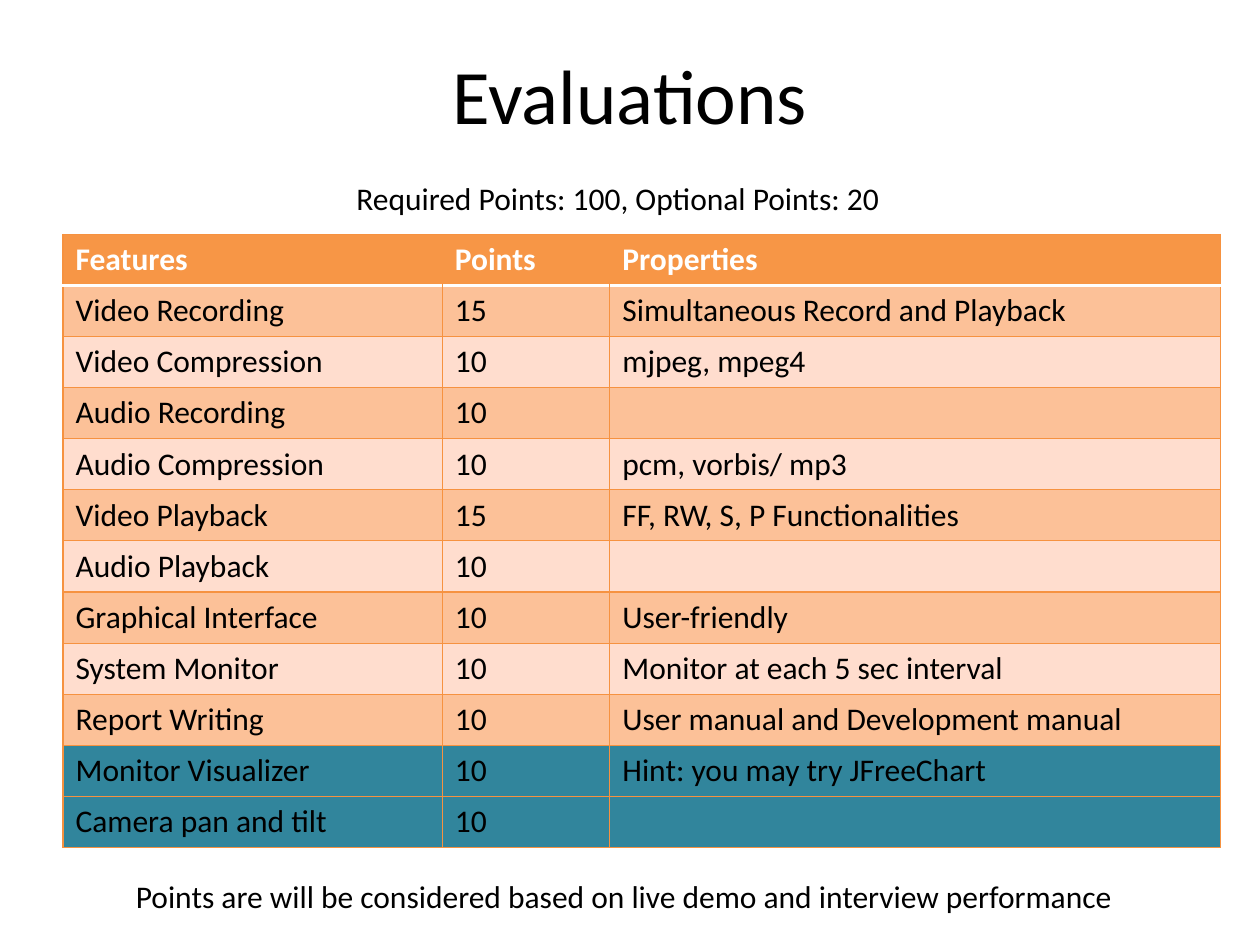
from lxml import etree
from pptx import Presentation
from pptx.dml.color import RGBColor
from pptx.enum.text import MSO_ANCHOR, MSO_AUTO_SIZE, PP_ALIGN
from pptx.oxml.ns import qn
from pptx.util import Inches, Pt

MIDDLE = MSO_ANCHOR.MIDDLE
CENTER = PP_ALIGN.CENTER
FIT_SHAPE = MSO_AUTO_SIZE.SHAPE_TO_FIT_TEXT
TITLE_ONLY = 5

FONT = "Calibri"
COLORS = {
    "text": "000000",
    "white": "FFFFFF",
    "header": "F79646",
    "dark band": "FCC198",
    "light band": "FFDDCE",
    "optional": "31859C",
    "grid": "F69240",
}
COLUMN_WIDTHS = (3.01, 1.33, 4.85)
TABLE_HEIGHT = 4.87
HEADINGS = ("Features", "Points", "Properties")
REQUIRED = [
    ("Video Recording", "15", "Simultaneous Record and Playback"),
    ("Video Compression", "10", "mjpeg, mpeg4"),
    ("Audio Recording", "10", ""),
    ("Audio Compression", "10", "pcm, vorbis/ mp3"),
    ("Video Playback", "15", "FF, RW, S, P Functionalities"),
    ("Audio Playback", "10", ""),
    ("Graphical Interface", "10", "User-friendly"),
    ("System Monitor", "10", "Monitor at each 5 sec interval"),
    ("Report Writing", "10", "User manual and Development manual"),
]
OPTIONAL = [
    ("Monitor Visualizer", "10", "Hint: you may try JFreeChart"),
    ("Camera pan and tilt", "10", ""),
]


def add_run(para, text, size=18, color="text", bold=False):
    span = para.add_run()
    span.text = text
    span.font.name = FONT
    span.font.size = Pt(size)
    span.font.bold = bold
    span.font.color.rgb = RGBColor.from_string(COLORS[color])


def fill_title(page, text):
    title = page.shapes.title
    title.left, title.top = Inches(0.5), Inches(0.12)
    title.width, title.height = Inches(9), Inches(1.25)
    title.text_frame.vertical_anchor = MIDDLE
    para = title.text_frame.paragraphs[0]
    para.alignment = CENTER
    add_run(para, text, size=44)


def add_note(page, text, left, top, width):
    box = page.shapes.add_textbox(
        Inches(left), Inches(top), Inches(width), Inches(0.4))
    box.text_frame.word_wrap = False
    box.text_frame.auto_size = FIT_SHAPE
    add_run(box.text_frame.paragraphs[0], text)


def set_border(cell, side, color, width=0.75):
    """Draw one side (L, R, T or B) of a cell; a color of None hides it."""
    line = etree.SubElement(cell._tc.get_or_add_tcPr(), qn(f"a:ln{side}"),
                            w=str(Pt(width)))
    if color is None:
        etree.SubElement(line, qn("a:noFill"))
    else:
        solid = etree.SubElement(line, qn("a:solidFill"))
        etree.SubElement(solid, qn("a:srgbClr"), val=COLORS[color])


def set_borders(cell, row, column):
    last_column = len(COLUMN_WIDTHS) - 1
    is_header = row == 0
    set_border(cell, "L", None if is_header and column > 0 else "grid")
    set_border(cell, "R",
               None if is_header and column < last_column else "grid")
    under_header = ("white", 2)
    set_border(cell, "T", *(under_header if row == 1 else ("grid",)))
    set_border(cell, "B", *(under_header if is_header else ("grid",)))


def row_fill(row):
    if row == 0:
        return "header"
    if row > len(REQUIRED):
        return "optional"
    return "dark band" if row % 2 else "light band"


def add_points_table(page):
    rows = [HEADINGS, *REQUIRED, *OPTIONAL]
    table = page.shapes.add_table(
        len(rows), len(HEADINGS), Inches(0.5), Inches(1.86),
        Inches(sum(COLUMN_WIDTHS)), Inches(TABLE_HEIGHT)).table
    for column, width in zip(table.columns, COLUMN_WIDTHS):
        column.width = Inches(width)
    for row, texts in enumerate(rows):
        table.rows[row].height = Inches(TABLE_HEIGHT / len(rows))
        for column, text in enumerate(texts):
            cell = table.cell(row, column)
            set_borders(cell, row, column)
            cell.fill.solid()
            cell.fill.fore_color.rgb = RGBColor.from_string(
                COLORS[row_fill(row)])
            if text:
                add_run(cell.text_frame.paragraphs[0], text,
                        color="text" if row else "white", bold=row == 0)


def main():
    deck = Presentation()
    deck.slide_width, deck.slide_height = Inches(10), Inches(7.5)
    page = deck.slides.add_slide(deck.slide_layouts[TITLE_ONLY])
    fill_title(page, "Evaluations")
    add_points_table(page)
    add_note(page, "Required Points: 100, Optional Points: 20",
             2.73, 1.37, 4.42)
    add_note(page, "Points are will be considered based on live demo "
             "and interview performance", 0.98, 6.91, 8)
    deck.save("out.pptx")


if __name__ == "__main__":
    main()
